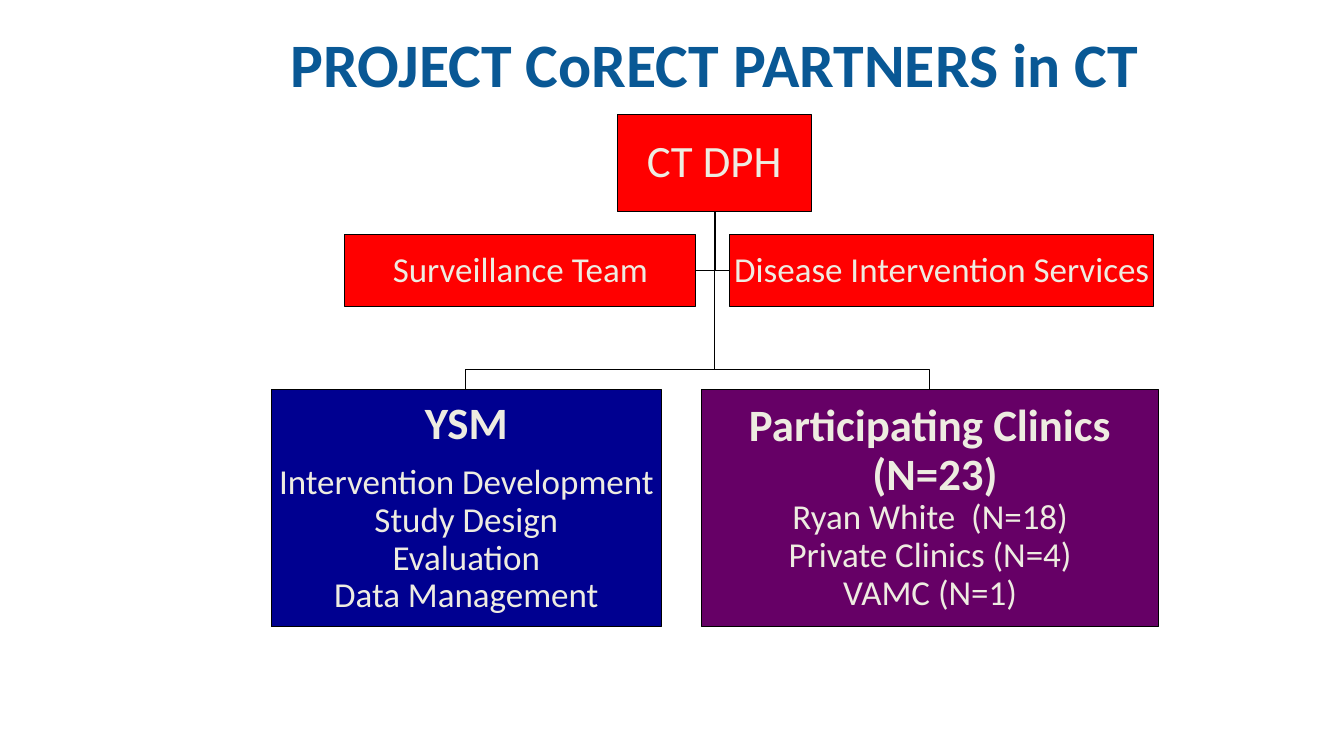
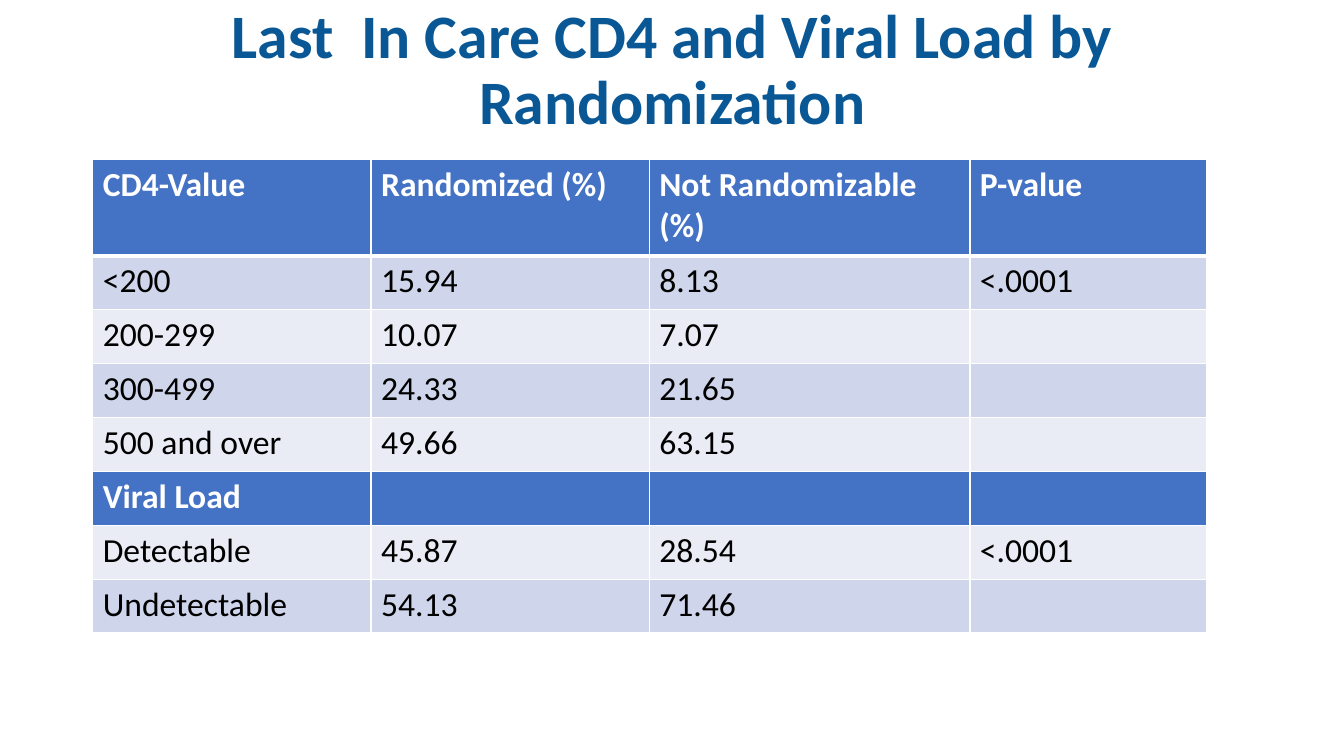
"""Build two slides: the project partner chart and the CD4 and viral load table."""
from lxml import etree
from pptx import Presentation
from pptx.dml.color import RGBColor
from pptx.enum.shapes import MSO_SHAPE
from pptx.enum.text import MSO_ANCHOR, MSO_AUTO_SIZE, PP_ALIGN
from pptx.oxml.ns import qn
from pptx.util import Pt

PX = 9144
RECT = MSO_SHAPE.RECTANGLE
MIDDLE = MSO_ANCHOR.MIDDLE
CENTER, LEFT = PP_ALIGN.CENTER, PP_ALIGN.LEFT
NO_FIT = MSO_AUTO_SIZE.NONE


class Theme:
    font = "Calibri"
    title, cream, black, white = "095895", "EEECE1", "000000", "FFFFFF"
    red, navy, purple = "FF0000", "000090", "660066"
    header, band_dark, band_light = "4472C4", "CFD5EA", "E9EBF5"
    title_size, head_size, item_size, cell_size = 44.1, 32, 25, 24


def write(p, text, size, color, bold=False, align=CENTER, spacing=0.9, after=0):
    """Add a formatted run to a paragraph."""
    p.alignment = align
    p.line_spacing = spacing
    p.space_before = Pt(0)
    p.space_after = Pt(after)
    r = p.add_run()
    r.text = text
    r.font.name = Theme.font
    r.font.size = Pt(size)
    r.font.bold = bold
    r.font.color.rgb = RGBColor.from_string(color)


def border(cell, side, width):
    """Draw one white cell border."""
    ln = etree.SubElement(cell._tc.get_or_add_tcPr(), qn(f"a:{side}"), w=str(Pt(width)))
    fill = etree.SubElement(ln, qn("a:solidFill"))
    etree.SubElement(fill, qn("a:srgbClr"), val=Theme.white)


prs = Presentation()
prs.slide_width, prs.slide_height = 1333 * PX, 750 * PX

titles = [
    ("PROJECT CoRECT PARTNERS in CT", (251, 19, 916, 95)),
    ("Last  In Care CD4 and Viral Load by Randomization", (92, 5, 1150, 132)),
]
slides = []
for text, at in titles:
    s = prs.slides.add_slide(prs.slide_layouts[5])
    sp = s.shapes.title
    sp.left, sp.top, sp.width, sp.height = [v * PX for v in at]
    tf = sp.text_frame
    tf.word_wrap = True
    tf.auto_size = NO_FIT
    tf.vertical_anchor = MIDDLE
    write(tf.paragraphs[0], text, Theme.title_size, Theme.title, bold=True)
    slides.append(s)
partners, results = slides

trunk_x, trunk_top, team_y, branch_y, unit_top = 709, 210, 268, 366, 387
elbows = [
    [(trunk_x, team_y), (724, team_y)],
    [(trunk_x, team_y), (690, team_y)],
    [(trunk_x, branch_y), (922, branch_y), (922, unit_top)],
    [(trunk_x, branch_y), (462, branch_y), (462, unit_top)],
]
for points in elbows:
    fb = partners.shapes.build_freeform(trunk_x, trunk_top, scale=PX)
    fb.add_line_segments(points, close=False)
    sp = fb.convert_to_shape()
    sp.shadow.inherit = False
    sp.fill.background()
    sp.line.color.rgb = RGBColor.from_string(Theme.black)
    sp.line.width = Pt(0.5)

head = dict(size=Theme.head_size, color=Theme.cream)
bold_head = dict(head, bold=True)
item = dict(size=Theme.item_size, color=Theme.cream)
boxes = [
    ((612, 114, 193, 96), Theme.red, [("CT DPH", head)]),
    ((269, 386, 387, 236), Theme.navy, [
        ("YSM", dict(bold_head, after=11)),
        ("Intervention Development", item),
        ("Study Design", item),
        ("Evaluation", item),
        ("Data Management", item),
    ]),
    ((696, 386, 453, 236), Theme.purple, [
        ("Participating Clinics", bold_head),
        (" (N=23)", bold_head),
        ("Ryan White  (N=18)", item),
        ("Private Clinics (N=4)", item),
        ("VAMC (N=1)", item),
    ]),
    ((342, 233, 348, 71), Theme.red, [("Surveillance Team", item)]),
    ((724, 233, 420, 71), Theme.red, [("Disease Intervention Services", item)]),
]
for at, fill, lines in boxes:
    sp = partners.shapes.add_shape(RECT, *[v * PX for v in at])
    sp.shadow.inherit = False
    sp.fill.solid()
    sp.fill.fore_color.rgb = RGBColor.from_string(fill)
    sp.line.color.rgb = RGBColor.from_string(Theme.black)
    sp.line.width = Pt(0.75)
    tf = sp.text_frame
    tf.word_wrap = True
    tf.vertical_anchor = MIDDLE
    tf.margin_left = tf.margin_right = tf.margin_top = tf.margin_bottom = 2 * PX
    for i, (text, style) in enumerate(lines):
        p = tf.add_paragraph() if i else tf.paragraphs[0]
        write(p, text, **style)

rows = [
    ("CD4-Value", "Randomized (%)", "Not Randomizable (%)", "P-value"),
    ("<200", "15.94", "8.13", "<.0001"),
    ("200-299", "10.07", "7.07", ""),
    ("300-499", "24.33", "21.65", ""),
    ("500 and over", "49.66", "63.15", ""),
    ("Viral Load", "", "", ""),
    ("Detectable", "45.87", "28.54", "<.0001"),
    ("Undetectable", "54.13", "71.46", ""),
]
header_rows = (0, 5)
col_widths = [276, 276, 318, 235]
table_height, head_height = 470 * PX, 96 * PX
row_height = (table_height - head_height) // (len(rows) - 1)
table = results.shapes.add_table(
    len(rows), len(col_widths), 92 * PX, 158 * PX,
    sum(col_widths) * PX, table_height).table
for col, width in zip(table.columns, col_widths):
    col.width = width * PX
for i, row in enumerate(rows):
    table.rows[i].height = row_height if i else head_height
    is_header = i in header_rows
    band = Theme.band_dark if i % 2 else Theme.band_light
    for j, text in enumerate(row):
        cell = table.cell(i, j)
        for side in ("lnL", "lnR", "lnT", "lnB"):
            thick = (i, side) in ((0, "lnB"), (1, "lnT"))
            border(cell, side, 3 if thick else 1)
        cell.fill.solid()
        cell.fill.fore_color.rgb = RGBColor.from_string(Theme.header if is_header else band)
        if text:
            write(cell.text_frame.paragraphs[0], text, Theme.cell_size,
                  Theme.white if is_header else Theme.black,
                  bold=is_header, align=LEFT, spacing=1.0)

prs.save("out.pptx")
